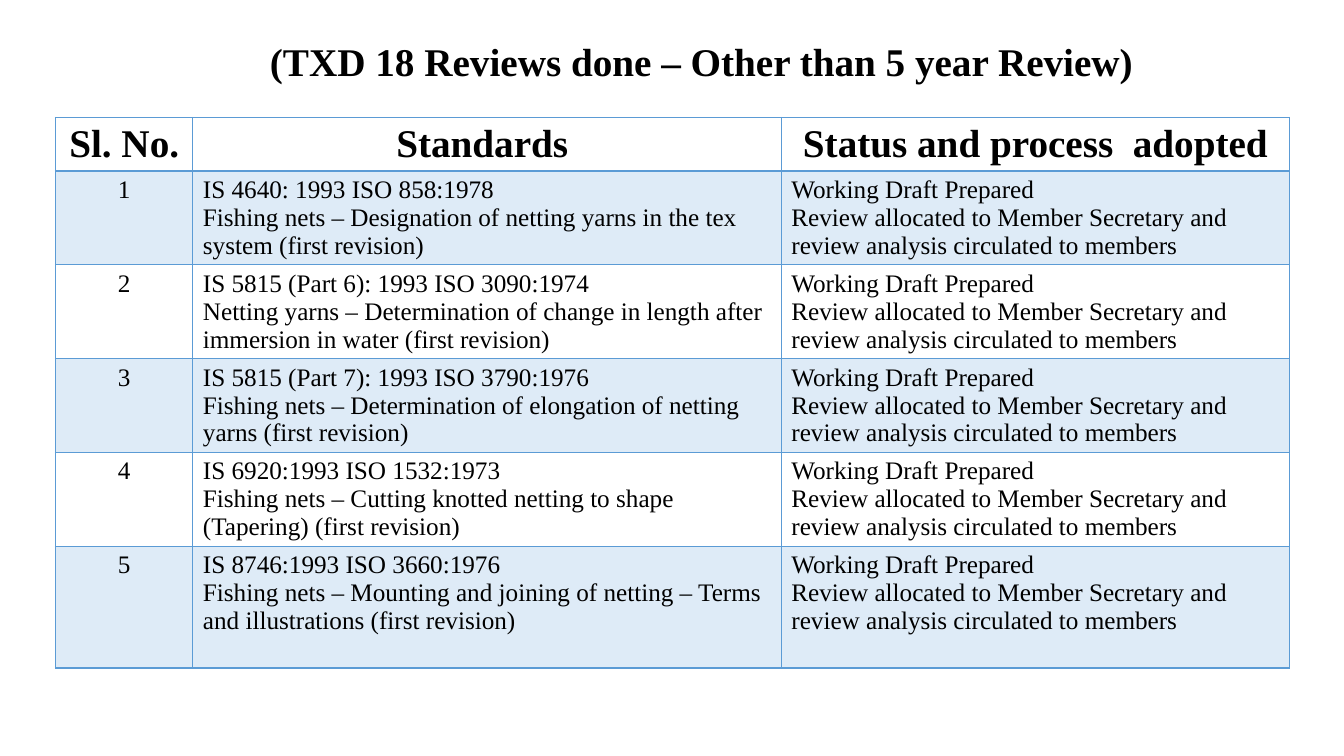
"""Build the TXD 18 review status slide with its table of standards."""
from lxml.etree import SubElement
from pptx import Presentation
from pptx.dml.color import RGBColor
from pptx.enum.text import MSO_ANCHOR as Anchor, PP_ALIGN as Align
from pptx.oxml.ns import qn
from pptx.util import Cm, Pt

TITLE = "(TXD 18 Reviews done – Other than 5 year Review)"
HEADERS = ["Sl. No.", "Standards ", "Status and process  adopted"]
STANDARDS = [
    ("IS 4640: 1993 ISO 858:1978",
     "Fishing nets – Designation of netting yarns in the tex system (first revision)"),
    ("IS 5815 (Part 6): 1993 ISO 3090:1974",
     "Netting yarns – Determination of change in length after immersion in water (first revision)"),
    ("IS 5815 (Part 7): 1993 ISO 3790:1976",
     "Fishing nets – Determination of elongation of netting yarns (first revision)"),
    ("IS 6920:1993 ISO 1532:1973",
     "Fishing nets – Cutting knotted netting to shape (Tapering) (first revision)"),
    ("IS 8746:1993 ISO 3660:1976",
     "Fishing nets – Mounting and joining of netting – Terms and illustrations (first revision)"),
]
STATUS = (
    "Working Draft Prepared",
    "Review allocated to Member Secretary and review analysis circulated to members",
)
COLORS = {"text": "000000", "border": "5B9BD5", "band": "DEEBF7"}
FONT = "Times New Roman"
COLUMN_WIDTHS = [3.46, 14.83, 12.8]
HEADER_HEIGHT, ROW_HEIGHT, LAST_HEIGHT = 1.32, 2.36, 3.07


def write_text(frame, lines, size=18, bold=False, align=Align.LEFT, spacing=None):
    for index, line in enumerate(lines):
        paragraph = frame.paragraphs[0] if index == 0 else frame.add_paragraph()
        paragraph.alignment = align
        if spacing:
            paragraph.line_spacing = spacing
        run = paragraph.add_run()
        run.text = line
        run.font.name = FONT
        run.font.size = Pt(size)
        run.font.bold = bold
        run.font.color.rgb = RGBColor.from_string(COLORS["text"])


def style_cell(cell, banded, top=1, bottom=1):
    if banded:
        cell.fill.solid()
        cell.fill.fore_color.rgb = RGBColor.from_string(COLORS["band"])
    else:
        cell.fill.background()
    properties = cell._tc.get_or_add_tcPr()
    sides = {"lnL": 1, "lnR": 1, "lnT": top, "lnB": bottom}
    for position, (side, width) in enumerate(sides.items()):
        line = SubElement(properties, qn(f"a:{side}"), w=str(Pt(width)))
        fill = SubElement(line, qn("a:solidFill"))
        SubElement(fill, qn("a:srgbClr"), val=COLORS["border"])
        properties.insert(position, line)


def add_title(slide):
    title = slide.shapes.title
    title.left, title.top, title.width, title.height = Cm(1.85), Cm(0.23), Cm(31.65), Cm(2.74)
    title.text_frame.vertical_anchor = Anchor.MIDDLE
    write_text(title.text_frame, [TITLE], size=28, bold=True, align=Align.CENTER, spacing=0.9)


def add_review_table(slide):
    rows = [[[header] for header in HEADERS]]
    rows += [[[str(number)], standard, STATUS] for number, standard in enumerate(STANDARDS, 1)]
    heights = [HEADER_HEIGHT] + [ROW_HEIGHT] * (len(STANDARDS) - 1) + [LAST_HEIGHT]
    table = slide.shapes.add_table(
        len(rows), len(HEADERS), Cm(1.4), Cm(2.96), Cm(sum(COLUMN_WIDTHS)), Cm(sum(heights))
    ).table
    for column, width in zip(table.columns, COLUMN_WIDTHS):
        column.width = Cm(width)
    for row_index, (row, height) in enumerate(zip(rows, heights)):
        table.rows[row_index].height = Cm(height)
        is_header = row_index == 0
        for column_index, lines in enumerate(row):
            cell = table.cell(row_index, column_index)
            centred = is_header or column_index == 0
            write_text(cell.text_frame, lines, size=28 if is_header else 18, bold=is_header,
                       align=Align.CENTER if centred else Align.LEFT)
            style_cell(cell, banded=row_index % 2 == 1,
                       top=2 if row_index == 1 else 1, bottom=2 if is_header else 1)


def main():
    presentation = Presentation()
    presentation.slide_width, presentation.slide_height = Cm(33.87), Cm(19.05)
    slide = presentation.slides.add_slide(presentation.slide_layouts[5])
    add_title(slide)
    add_review_table(slide)
    presentation.save("out.pptx")


if __name__ == "__main__":
    main()
